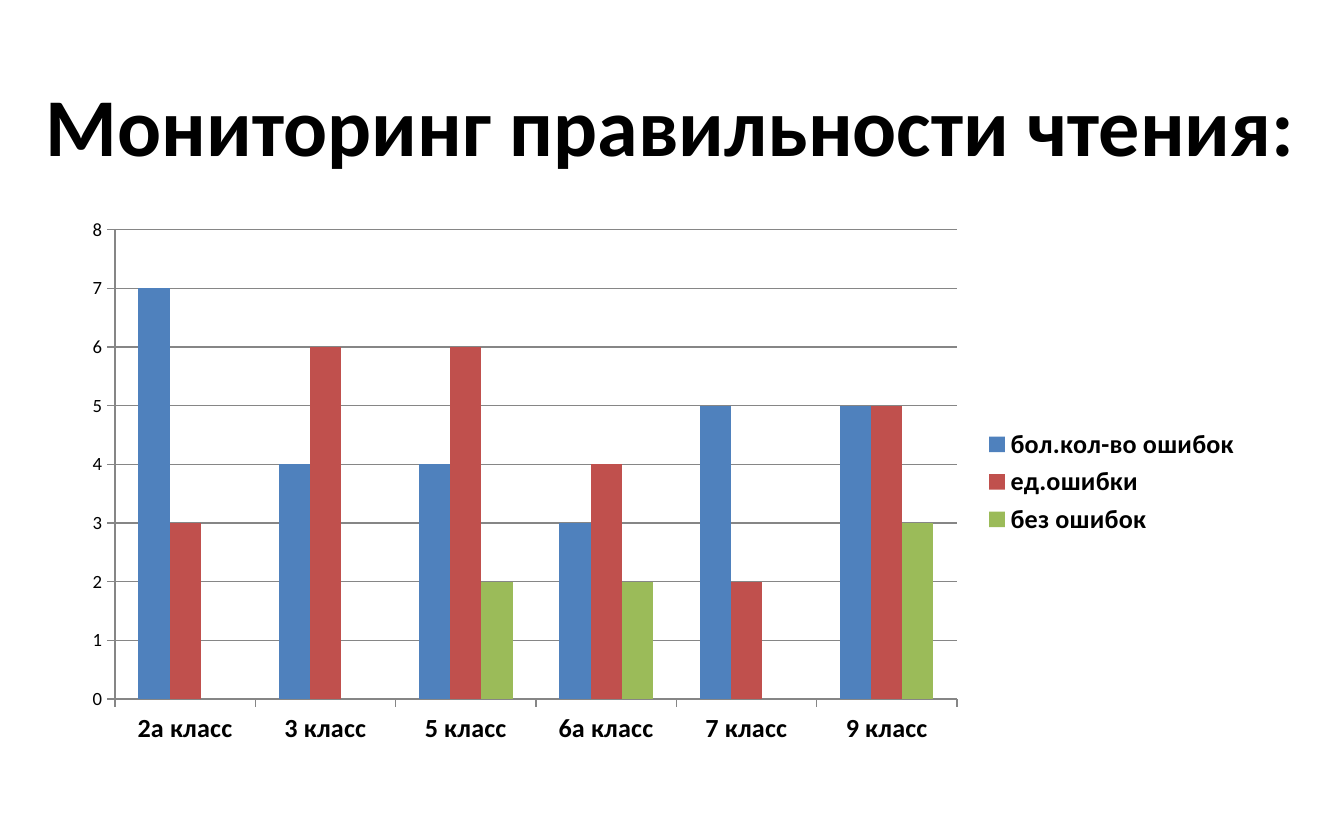
from pptx import Presentation
from pptx.chart.data import CategoryChartData
from pptx.dml.color import RGBColor
from pptx.enum.chart import XL_CHART_TYPE, XL_LEGEND_POSITION, XL_TICK_MARK
from pptx.enum.text import MSO_ANCHOR, PP_ALIGN
from pptx.util import Cm, Pt

COLUMN = XL_CHART_TYPE.COLUMN_CLUSTERED
LEGEND_RIGHT = XL_LEGEND_POSITION.RIGHT
TICK_OUT = XL_TICK_MARK.OUTSIDE
MIDDLE = MSO_ANCHOR.MIDDLE
CENTER = PP_ALIGN.CENTER

TITLE = "Мониторинг правильности чтения:"
CLASSES = ["2а класс", "3 класс", "5 класс", "6а класс", "7 класс", "9 класс"]
SERIES = [
    ("бол.кол-во ошибок", [7, 4, 4, 3, 5, 5], "blue"),
    ("ед.ошибки", [3, 6, 6, 4, 2, 5], "red"),
    ("без ошибок", [None, None, 2, 2, None, 3], "green"),
]
COLORS = {
    "text": "000000",
    "line": "868686",
    "blue": "4F81BD",
    "red": "C0504D",
    "green": "9BBB59",
}
FONT = "Calibri"


def rgb(name):
    return RGBColor.from_string(COLORS[name])


def set_font(font, size, bold=False):
    font.name = FONT
    font.size = Pt(size)
    font.bold = bold
    font.color.rgb = rgb("text")


def set_line(line):
    line.color.rgb = rgb("line")
    line.width = Pt(0.75)


def add_title(slide):
    sp = slide.shapes.title
    sp.left, sp.top, sp.width, sp.height = Cm(0.5), Cm(1.27), Cm(24.37), Cm(2.14)
    tf = sp.text_frame
    tf.text = TITLE
    tf.word_wrap = False
    tf.vertical_anchor = MIDDLE
    p = tf.paragraphs[0]
    p.alignment = CENTER
    set_font(p.font, 44, True)


def add_error_chart(slide):
    data = CategoryChartData()
    data.categories = CLASSES
    for name, values, _ in SERIES:
        data.add_series(name, values)
    chart = slide.shapes.add_chart(
        COLUMN, Cm(1.3), Cm(3.94), Cm(22.4), Cm(10.34), data
    ).chart
    chart.has_title = False
    set_font(chart.font, 10)

    plot = chart.plots[0]
    plot.gap_width = 150
    plot.overlap = 0
    plot.vary_by_categories = False
    for series, (_, _, color) in zip(plot.series, SERIES):
        series.format.fill.solid()
        series.format.fill.fore_color.rgb = rgb(color)
        series.invert_if_negative = False

    for axis, size, bold in ((chart.category_axis, 14, True), (chart.value_axis, 10, False)):
        axis.major_tick_mark = TICK_OUT
        set_line(axis.format.line)
        set_font(axis.tick_labels.font, size, bold)
    axis = chart.value_axis
    axis.minimum_scale, axis.maximum_scale, axis.major_unit = 0, 8, 1
    axis.has_major_gridlines = True
    set_line(axis.major_gridlines.format.line)

    chart.has_legend = True
    chart.legend.position = LEGEND_RIGHT
    chart.legend.include_in_layout = False
    set_font(chart.legend.font, 14, True)


def main():
    prs = Presentation()
    prs.slide_width, prs.slide_height = Cm(25.4), Cm(15.88)
    slide = prs.slides.add_slide(prs.slide_layouts[5])
    add_title(slide)
    add_error_chart(slide)
    prs.save("out.pptx")


if __name__ == "__main__":
    main()
